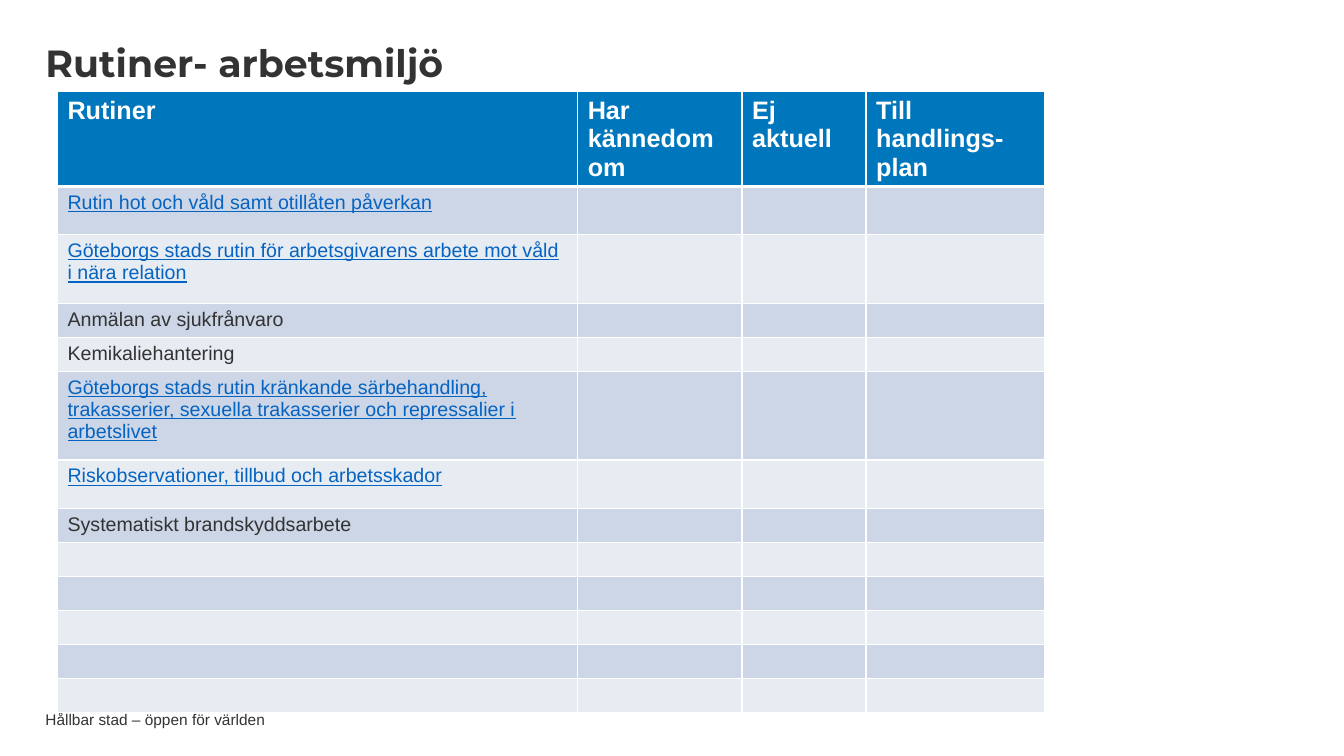
import pptx
import pptx.dml.color
import pptx.enum.text
import pptx.oxml.ns
import pptx.util
from lxml import etree

PX = 9144
INK, WHITE, LINK, BLUE = "333333", "FFFFFF", "0563C1", "0077BC"
BANDS = ["CCD6E7", "E7ECF3"]
COLUMNS = [("Rutiner", 516), ("Har kännedom om", 163),
           ("Ej aktuell", 123), ("Till handlings-plan", 177)]
HEADER_HEIGHT, ROW_HEIGHT = 93, 32
ROUTINES = [
    ("Rutin hot och våld samt otillåten påverkan", 48, True),
    ("Göteborgs stads rutin för arbetsgivarens arbete mot våld i nära relation", 68, True),
    ("Anmälan av sjukfrånvaro", ROW_HEIGHT, False),
    ("Kemikaliehantering", ROW_HEIGHT, False),
    ("Göteborgs stads rutin kränkande särbehandling, trakasserier, "
     "sexuella trakasserier och repressalier i arbetslivet", 88, True),
    ("Riskobservationer, tillbud och arbetsskador", 48, True),
    ("Systematiskt brandskyddsarbete", ROW_HEIGHT, False),
] + [("", ROW_HEIGHT, False)] * 5


def px(n):
    """Turn px into EMU."""
    return pptx.util.Emu(n * PX)


def rgb(value):
    """Turn a hex string into a colour."""
    return pptx.dml.color.RGBColor.from_string(value)


def style(p, size, color, name="Arial", bold=False, underline=False):
    """Format every run of a paragraph."""
    f = p.font
    f.size, f.name, f.bold, f.underline = pptx.util.Pt(size), name, bold, underline
    f.color.rgb = rgb(color)


def fit_box(sp, box, anchor):
    """Place a text shape in its box, without margins."""
    sp.left, sp.top, sp.width, sp.height = map(px, box)
    tf = sp.text_frame
    tf.word_wrap = True
    tf.auto_size = pptx.enum.text.MSO_AUTO_SIZE.NONE
    tf.vertical_anchor = anchor
    tf.margin_left = tf.margin_right = tf.margin_top = tf.margin_bottom = 0
    return tf.paragraphs[0]


def add_title(slide, box):
    """Fill the title placeholder."""
    sp = slide.shapes.title
    sp.text_frame.text = "Rutiner- arbetsmiljö"
    p = fit_box(sp, box, pptx.enum.text.MSO_ANCHOR.TOP)
    p.alignment = pptx.enum.text.PP_ALIGN.LEFT
    p.line_spacing = 0.9
    style(p, 27, INK, "Montserrat", bold=True)


def add_footer(slide, box):
    """Add the line at the foot of the slide."""
    sp = slide.shapes.add_textbox(*map(px, box))
    sp.text_frame.text = "Hållbar stad – öppen för världen"
    style(fit_box(sp, box, pptx.enum.text.MSO_ANCHOR.MIDDLE), 11, INK)


def paint_cell(cell, fill, top=1, bottom=1):
    """Give a cell white borders and a fill."""
    qn = pptx.oxml.ns.qn
    tc_pr = cell._tc.get_or_add_tcPr()
    for side, width in (("L", 1), ("R", 1), ("T", top), ("B", bottom)):
        ln = etree.SubElement(tc_pr, qn("a:ln" + side), w=str(pptx.util.Pt(width)))
        solid = etree.SubElement(ln, qn("a:solidFill"))
        etree.SubElement(solid, qn("a:srgbClr"), val=WHITE)
    cell.fill.solid()
    cell.fill.fore_color.rgb = rgb(fill)


def write_cell(cell, text, size, color, **look):
    """Write a cell's text, or size its empty line."""
    p = cell.text_frame.paragraphs[0]
    if text:
        p.text = text
        style(p, size, color, **look)
    else:
        etree.SubElement(p._p, pptx.oxml.ns.qn("a:endParaRPr"), sz=str(size * 100))


def add_routines(slide, left, top):
    """Add the checklist of routines."""
    heights = [HEADER_HEIGHT] + [height for _, height, _ in ROUTINES]
    widths = [width for _, width in COLUMNS]
    table = slide.shapes.add_table(len(heights), len(widths), px(left), px(top),
                                   px(sum(widths)), px(sum(heights))).table
    table.first_row = table.horz_banding = False
    for row, height in zip(table.rows, heights):
        row.height = px(height)
    for c, (heading, width) in enumerate(COLUMNS):
        table.columns[c].width = px(width)
        cell = table.cell(0, c)
        paint_cell(cell, BLUE, bottom=3)
        write_cell(cell, heading, 18, WHITE, bold=True)
        for r, (routine, _, linked) in enumerate(ROUTINES):
            cell = table.cell(r + 1, c)
            paint_cell(cell, BANDS[r % 2], top=1 if r else 3)
            write_cell(cell, "" if c else routine, 14,
                       LINK if linked else INK, underline=linked)


def main():
    """Build and save the slide."""
    prs = pptx.Presentation()
    prs.slide_width, prs.slide_height = px(1333), px(750)
    slide = prs.slides.add_slide(prs.slide_layouts.get_by_name("Title Only"))
    add_footer(slide, (45, 706, 945, 16))
    add_title(slide, (45, 44, 1003, 81))
    add_routines(slide, 57, 91)
    prs.save("out.pptx")


if __name__ == "__main__":
    main()
